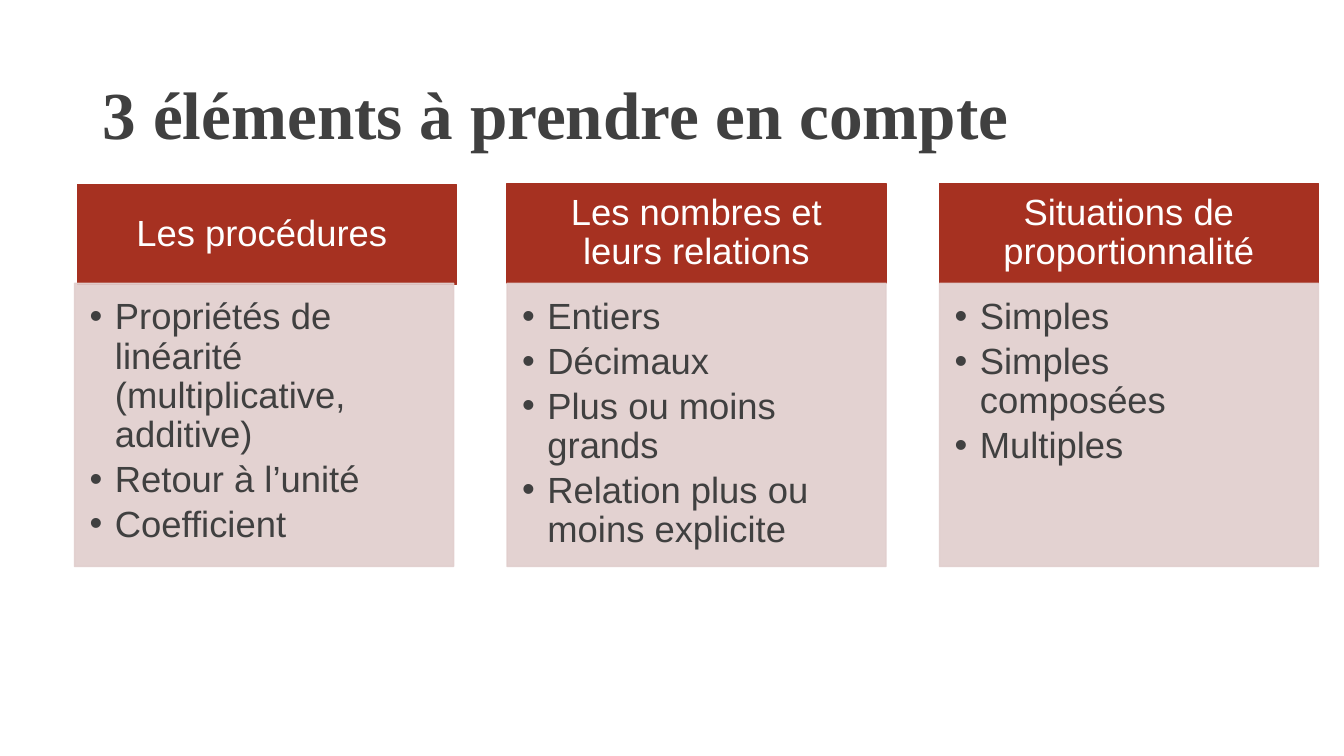
"""Build a slide of three titled columns on teaching proportionality."""
from dataclasses import dataclass

import lxml.etree
import pptx
import pptx.dml.color
import pptx.enum.shapes
import pptx.enum.text
import pptx.oxml.ns
import pptx.util

Pt = pptx.util.Pt
Anchor = pptx.enum.text.MSO_ANCHOR
Align = pptx.enum.text.PP_ALIGN

COLORS = {"header": "A63121", "panel": "E1CECD", "text": "404040", "light": "FFFFFF"}
COLUMN_LEFT, COLUMN_PITCH, COLUMN_WIDTH = 53.3, 308.9, 270.7
HEADER_TOP, HEADER_HEIGHT = 131, 71.3
PANEL_TOP, PANEL_HEIGHT = 202.3, 202.3


@dataclass(frozen=True)
class Column:
    """A heading with its list and the offset of the heading."""

    heading: str
    items: tuple[str, ...]
    offset: tuple[float, float] = (0, 0)


COLUMNS = (
    Column(
        "Les procédures ",
        ("Propriétés de linéarité (multiplicative, additive)", "Retour à l’unité", "Coefficient"),
        (2.1, 0.8),
    ),
    Column(
        "Les nombres et leurs relations",
        ("Entiers", "Décimaux", "Plus ou moins grands", "Relation plus ou moins explicite"),
    ),
    Column("Situations de proportionnalité", ("Simples", "Simples composées", "Multiples")),
)


def rgb(name: str) -> pptx.dml.color.RGBColor:
    """Return a named colour."""
    return pptx.dml.color.RGBColor.from_string(COLORS[name])


def place(shape, left: float, top: float, width: float, height: float) -> None:
    """Set the position and size of a shape in points."""
    shape.left, shape.top = Pt(left), Pt(top)
    shape.width, shape.height = Pt(width), Pt(height)


def paint(shape, color: str) -> None:
    """Give a shape a fill and a matching outline."""
    shape.fill.solid()
    shape.fill.fore_color.rgb = rgb(color)
    shape.line.color.rgb = rgb(color)
    shape.line.width = Pt(1)


def set_opacity(shape, percent: int) -> None:
    """Set the opacity of the fill and outline."""
    properties = shape._element.spPr
    for color in properties.iter(pptx.oxml.ns.qn("a:srgbClr")):
        alpha = lxml.etree.SubElement(color, pptx.oxml.ns.qn("a:alpha"))
        alpha.set("val", str(percent * 1000))


def format_frame(frame, anchor, margins: tuple[float, float, float, float]) -> None:
    """Set wrapping, anchoring and left, top, right and bottom margins."""
    frame.word_wrap = True
    frame.auto_size = pptx.enum.text.MSO_AUTO_SIZE.NONE
    frame.vertical_anchor = anchor
    frame.margin_left, frame.margin_top, frame.margin_right, frame.margin_bottom = map(Pt, margins)


def format_paragraph(paragraph, align, font: str, size: float, color: str, bold: bool) -> None:
    """Set the alignment, spacing and font of a paragraph."""
    paragraph.alignment = align
    paragraph.line_spacing = 0.9
    paragraph.space_before = Pt(0)
    paragraph.font.name = font
    paragraph.font.size = Pt(size)
    paragraph.font.bold = bold
    paragraph.font.color.rgb = rgb(color)


def add_bullet(paragraph) -> None:
    """Add a hanging bullet to a paragraph."""
    properties = paragraph._p.get_or_add_pPr()
    properties.set("marL", str(Pt(18)))
    properties.set("indent", str(-Pt(18)))
    bullet = lxml.etree.SubElement(properties, pptx.oxml.ns.qn("a:buChar"))
    bullet.set("char", "•")


def fill_title(title) -> None:
    """Write the slide title."""
    place(title, 66.2, 28.8, 774, 85)
    format_frame(title.text_frame, Anchor.BOTTOM, (7.2, 3.6, 7.2, 3.6))
    title.text_frame.text = "3 éléments à prendre en compte"
    format_paragraph(title.text_frame.paragraphs[0], Align.LEFT, "Times New Roman", 48, "text", True)


def add_header(slide, column: Column, left: float):
    """Draw the heading of a column and return its shape."""
    shift_x, shift_y = column.offset
    header = slide.shapes.add_shape(
        pptx.enum.shapes.MSO_SHAPE.RECTANGLE,
        Pt(left + shift_x), Pt(HEADER_TOP + shift_y), Pt(COLUMN_WIDTH), Pt(HEADER_HEIGHT),
    )
    header.shadow.inherit = False
    paint(header, "header")
    format_frame(header.text_frame, Anchor.MIDDLE, (14.4, 8.6, 14.4, 8.6))
    header.text_frame.text = column.heading
    format_paragraph(header.text_frame.paragraphs[0], Align.CENTER, "Arial", 26, "light", False)
    return header


def fill_panel(panel, column: Column, left: float) -> None:
    """Write the bulleted list of a column."""
    place(panel, left, PANEL_TOP, COLUMN_WIDTH, PANEL_HEIGHT)
    paint(panel, "panel")
    set_opacity(panel, 90)
    format_frame(panel.text_frame, Anchor.TOP, (10.8, 10.8, 14.4, 16.6))
    panel.text_frame.text = "\n".join(column.items)
    for paragraph in panel.text_frame.paragraphs:
        paragraph.level = 1
        add_bullet(paragraph)
        format_paragraph(paragraph, Align.LEFT, "Arial", 26, "text", False)
        paragraph.space_after = Pt(3.9)


def main() -> None:
    """Create and save the presentation."""
    presentation = pptx.Presentation()
    presentation.slide_width, presentation.slide_height = Pt(960), Pt(540)
    slide = presentation.slides.add_slide(presentation.slide_layouts.get_by_name("Comparison"))
    fill_title(slide.shapes.title)
    *panels, spare = list(slide.placeholders)[1:5]
    spare._element.getparent().remove(spare._element)
    for index, (column, panel) in enumerate(zip(COLUMNS, panels)):
        left = COLUMN_LEFT + index * COLUMN_PITCH
        header = add_header(slide, column, left)
        fill_panel(panel, column, left)
        panel._element.addprevious(header._element)
    presentation.save("out.pptx")


if __name__ == "__main__":
    main()
